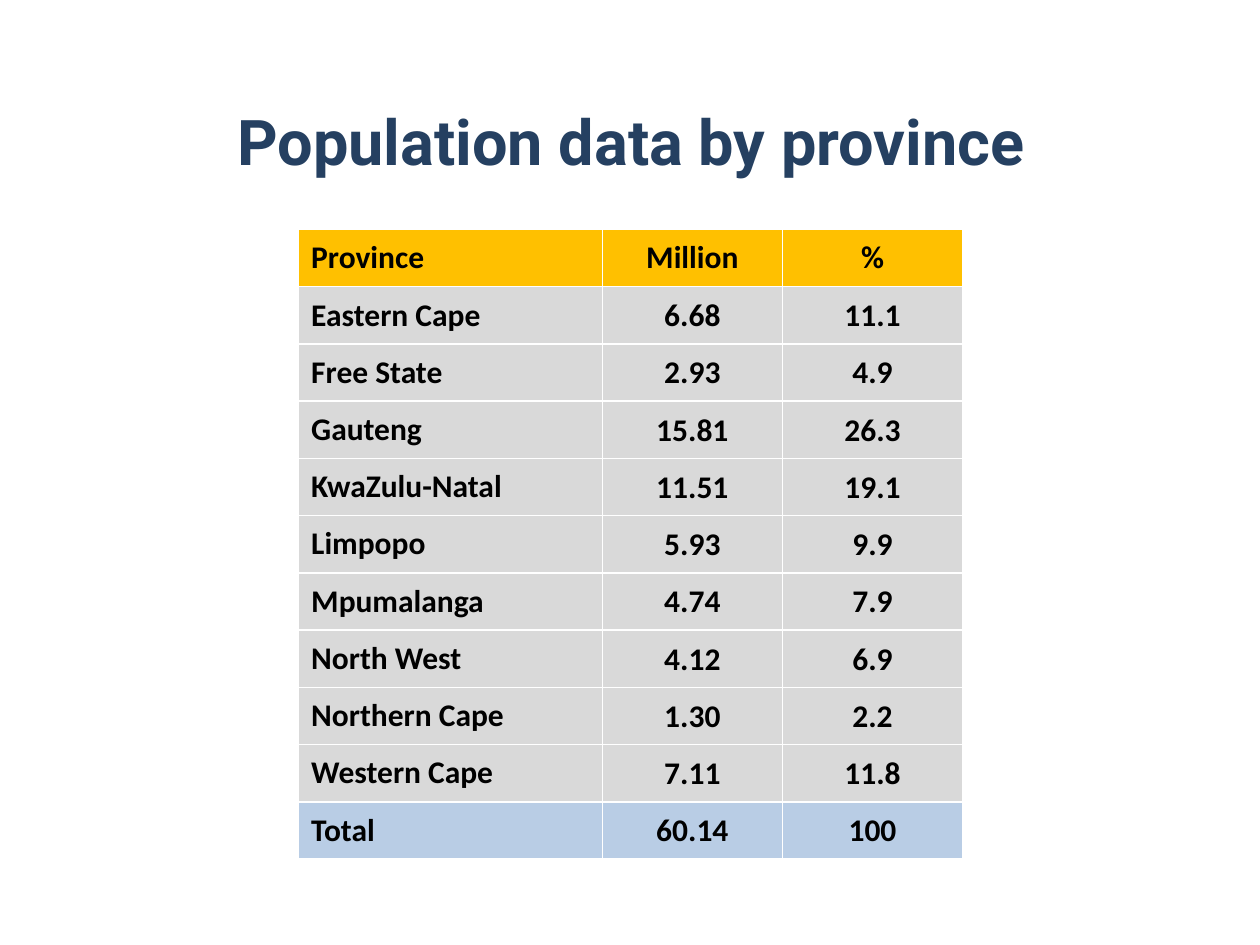
import pptx
import pptx.dml.color
import pptx.enum.text
import pptx.util

RGBColor = pptx.dml.color.RGBColor
Inches = pptx.util.Inches
ALIGN = pptx.enum.text.PP_ALIGN
MIDDLE = pptx.enum.text.MSO_ANCHOR.MIDDLE

NAVY = RGBColor(0x25, 0x40, 0x61)
BLACK = RGBColor(0x00, 0x00, 0x00)
AMBER = RGBColor(0xFF, 0xC0, 0x00)
GREY = RGBColor(0xD9, 0xD9, 0xD9)
PALE_BLUE = RGBColor(0xB9, 0xCD, 0xE5)

POPULATION = [
    ("Province", "Million", "%"),
    ("Eastern Cape", "6.68", "11.1"),
    ("Free State", "2.93", "4.9"),
    ("Gauteng", "15.81", "26.3"),
    ("KwaZulu-Natal", "11.51", "19.1"),
    ("Limpopo", "5.93", "9.9"),
    ("Mpumalanga", "4.74", "7.9"),
    ("North West", "4.12", "6.9"),
    ("Northern Cape", "1.30", "2.2"),
    ("Western Cape", "7.11", "11.8"),
    ("Total", "60.14", "100"),
]
COLUMN_WIDTHS = (2.41, 1.43, 1.43)
TABLE_HEIGHT = 5
LAST_ROW = len(POPULATION) - 1


def style_paragraph(paragraph, font_name, size, color, alignment):
    paragraph.alignment = alignment
    paragraph.font.name = font_name
    paragraph.font.size = pptx.util.Pt(size)
    paragraph.font.bold = True
    paragraph.font.color.rgb = color


deck = pptx.Presentation()
deck.slide_width, deck.slide_height = Inches(10), Inches(7.5)
slide = deck.slides.add_slide(deck.slide_layouts[6])

# Heading
heading = slide.shapes.add_textbox(
    Inches(0.51), Inches(0.68), Inches(9), Inches(0.87)).text_frame
heading.word_wrap = True
heading.vertical_anchor = MIDDLE
heading.text = "Population data by province"
style_paragraph(heading.paragraphs[0], "Roboto", 36, NAVY, ALIGN.CENTER)

# Population table; the default table style supplies the white rules
provinces = slide.shapes.add_table(
    len(POPULATION), len(COLUMN_WIDTHS), Inches(2.37), Inches(1.82),
    Inches(sum(COLUMN_WIDTHS)), Inches(TABLE_HEIGHT)).table
provinces.horz_banding = False
for column, width in zip(provinces.columns, COLUMN_WIDTHS):
    column.width = Inches(width)

row_fills = {0: AMBER, LAST_ROW: PALE_BLUE}
for r, record in enumerate(POPULATION):
    for c, value in enumerate(record):
        cell = provinces.cell(r, c)
        cell.text = value
        cell.vertical_anchor = MIDDLE
        cell.fill.solid()
        cell.fill.fore_color.rgb = row_fills.get(r, GREY)
        if r > 0 and c > 0:
            cell.margin_left = cell.margin_right = cell.margin_top = Inches(0.01)
            cell.margin_bottom = 0
        style_paragraph(cell.text_frame.paragraphs[0], "Calibri", 18, BLACK,
                        ALIGN.CENTER if c else ALIGN.LEFT)

deck.save("out.pptx")
